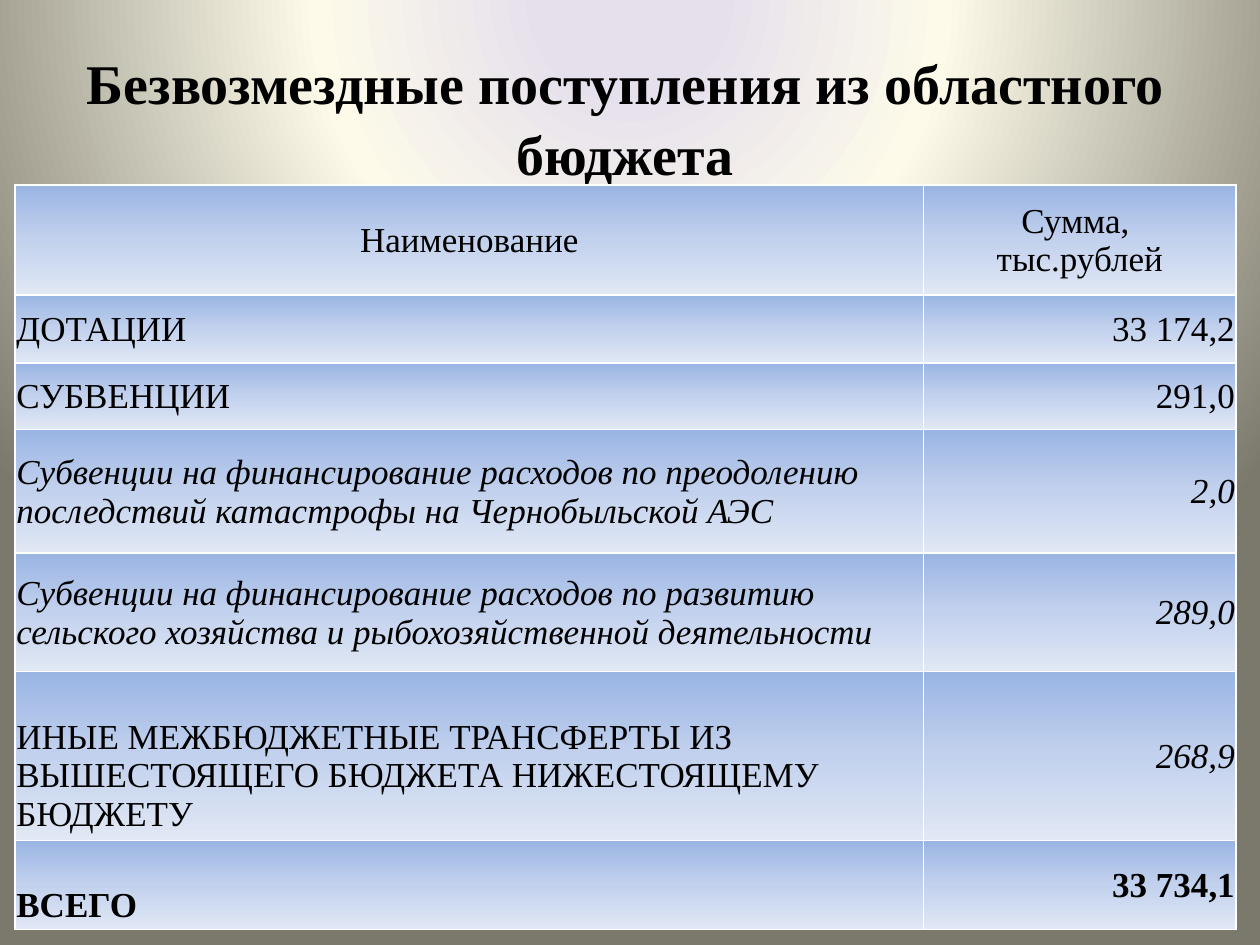
from dataclasses import dataclass

from lxml import etree
from pptx import Presentation
from pptx import util as u
from pptx.dml.color import RGBColor
from pptx.enum import text
from pptx.oxml.ns import nsdecls, qn
from pptx.oxml import parse_xml


@dataclass(frozen=True)
class Theme:
    font: str = "Times New Roman"
    ink: str = "000000"
    border: str = "FFFFFF"
    border_width: float = 1
    title_size: float = 32
    table_size: float = 20
    backdrop: tuple = ((0, "E6E0EC"), (11, "E6E0EC"), (40, "FDFAEA"), (100, "7B796B"))
    cell_fill: tuple = ((0, "9AB5E4"), (50, "C2D1ED"), (100, "E1E8F5"))


@dataclass(frozen=True)
class BudgetLine:
    name: str
    amount: str
    height: float
    italic_name: bool = False
    italic_amount: bool = False
    bold: bool = False
    name_drop: float = 0.01


THEME = Theme()
ALIGN = text.PP_ALIGN
LINE_DROP = 0.32
COLUMN_WIDTHS = (7.21, 2.48)
BUDGET = (
    BudgetLine("Наименование", "Сумма, \vтыс.рублей", 0.87),
    BudgetLine("ДОТАЦИИ", "33 174,2", 0.54),
    BudgetLine("СУБВЕНЦИИ", "291,0", 0.53),
    BudgetLine("Субвенции на финансирование расходов по преодолению "
               "последствий катастрофы на Чернобыльской АЭС",
               "2,0", 0.98, italic_name=True, italic_amount=True),
    BudgetLine("Субвенции на финансирование расходов по развитию "
               "сельского хозяйства и рыбохозяйственной деятельности",
               "289,0", 0.94, italic_name=True, italic_amount=True),
    BudgetLine("ИНЫЕ МЕЖБЮДЖЕТНЫЕ ТРАНСФЕРТЫ ИЗ ВЫШЕСТОЯЩЕГО БЮДЖЕТА "
               "НИЖЕСТОЯЩЕМУ БЮДЖЕТУ",
               "268,9", 1.34, italic_amount=True, name_drop=LINE_DROP),
    BudgetLine("ВСЕГО", "33 734,1", 0.71, bold=True, name_drop=LINE_DROP),
)


def gradient(stops: tuple, direction: str) -> etree.ElementBase:
    """Return a gradFill with percentage stops and the given direction XML."""
    stop_list = "".join(
        f'<a:gs pos="{position * 1000}"><a:srgbClr val="{color}"/></a:gs>'
        for position, color in stops)
    return parse_xml(f'<a:gradFill {nsdecls("a")} rotWithShape="1">'
                     f'<a:gsLst>{stop_list}</a:gsLst>{direction}</a:gradFill>')


def paint_background(slide) -> None:
    slide.background.fill.solid()
    properties = slide.element.find(".//" + qn("p:bgPr"))
    glow = ('<a:path path="circle"><a:fillToRect l="50000" t="-80000" '
            'r="50000" b="180000"/></a:path>')
    properties.replace(properties[0], gradient(THEME.backdrop, glow))


def format_text(frame, size: float, align, bold: bool = False,
                italic: bool = False) -> None:
    for paragraph in frame.paragraphs:
        paragraph.alignment = align
        for run in paragraph.runs:
            run.font.name = THEME.font
            run.font.size = u.Pt(size)
            run.font.bold = bold
            run.font.italic = italic
            run.font.color.rgb = RGBColor.from_string(THEME.ink)


def add_title(slide) -> None:
    title = slide.shapes.title
    title.left, title.top = u.Inches(0.28), u.Inches(0.29)
    title.width, title.height = u.Inches(9.37), u.Inches(1.72)
    frame = title.text_frame
    frame.text = "Безвозмездные поступления из областного бюджета"
    frame.word_wrap = True
    frame.auto_size = text.MSO_AUTO_SIZE.NONE
    frame.vertical_anchor = text.MSO_ANCHOR.TOP
    frame.margin_top = u.Inches(0.07)
    frame.paragraphs[0].line_spacing = 1.05
    format_text(frame, THEME.title_size, ALIGN.CENTER, bold=True)


def style_cell(cell, top_margin: float) -> None:
    cell.vertical_anchor = text.MSO_ANCHOR.MIDDLE
    cell.margin_left = cell.margin_right = u.Inches(0.01)
    cell.margin_top, cell.margin_bottom = u.Inches(top_margin), 0
    properties = cell._tc.get_or_add_tcPr()
    for side in ("lnL", "lnR", "lnT", "lnB"):
        properties.append(parse_xml(
            f'<a:{side} {nsdecls("a")} w="{u.Pt(THEME.border_width)}"><a:solidFill>'
            f'<a:srgbClr val="{THEME.border}"/></a:solidFill></a:{side}>'))
    properties.append(gradient(THEME.cell_fill, '<a:lin ang="5400000" scaled="0"/>'))


def fill_row(row, line: BudgetLine, name_align, amount_align) -> None:
    row.height = u.Inches(line.height)
    name, amount = row.cells
    name.text_frame.text = line.name
    amount.text_frame.text = line.amount
    style_cell(name, line.name_drop)
    style_cell(amount, 0.01)
    format_text(name.text_frame, THEME.table_size, name_align,
                line.bold, line.italic_name)
    format_text(amount.text_frame, THEME.table_size, amount_align,
                line.bold, line.italic_amount)


def add_budget_table(slide) -> None:
    table = slide.shapes.add_table(
        len(BUDGET), len(COLUMN_WIDTHS), u.Inches(0.12), u.Inches(1.47),
        u.Inches(sum(COLUMN_WIDTHS)),
        u.Inches(sum(line.height for line in BUDGET))).table
    table.first_row = table.horz_banding = False
    for column, width in zip(table.columns, COLUMN_WIDTHS):
        column.width = u.Inches(width)
    for index, (row, line) in enumerate(zip(table.rows, BUDGET)):
        aligns = (ALIGN.LEFT, ALIGN.RIGHT) if index else (ALIGN.CENTER, ALIGN.CENTER)
        fill_row(row, line, *aligns)


def main() -> None:
    deck = Presentation()
    deck.slide_width, deck.slide_height = u.Inches(10), u.Inches(7.5)
    slide = deck.slides.add_slide(deck.slide_layouts.get_by_name("Title Only"))
    paint_background(slide)
    add_title(slide)
    add_budget_table(slide)
    deck.save("out.pptx")


if __name__ == "__main__":
    main()
